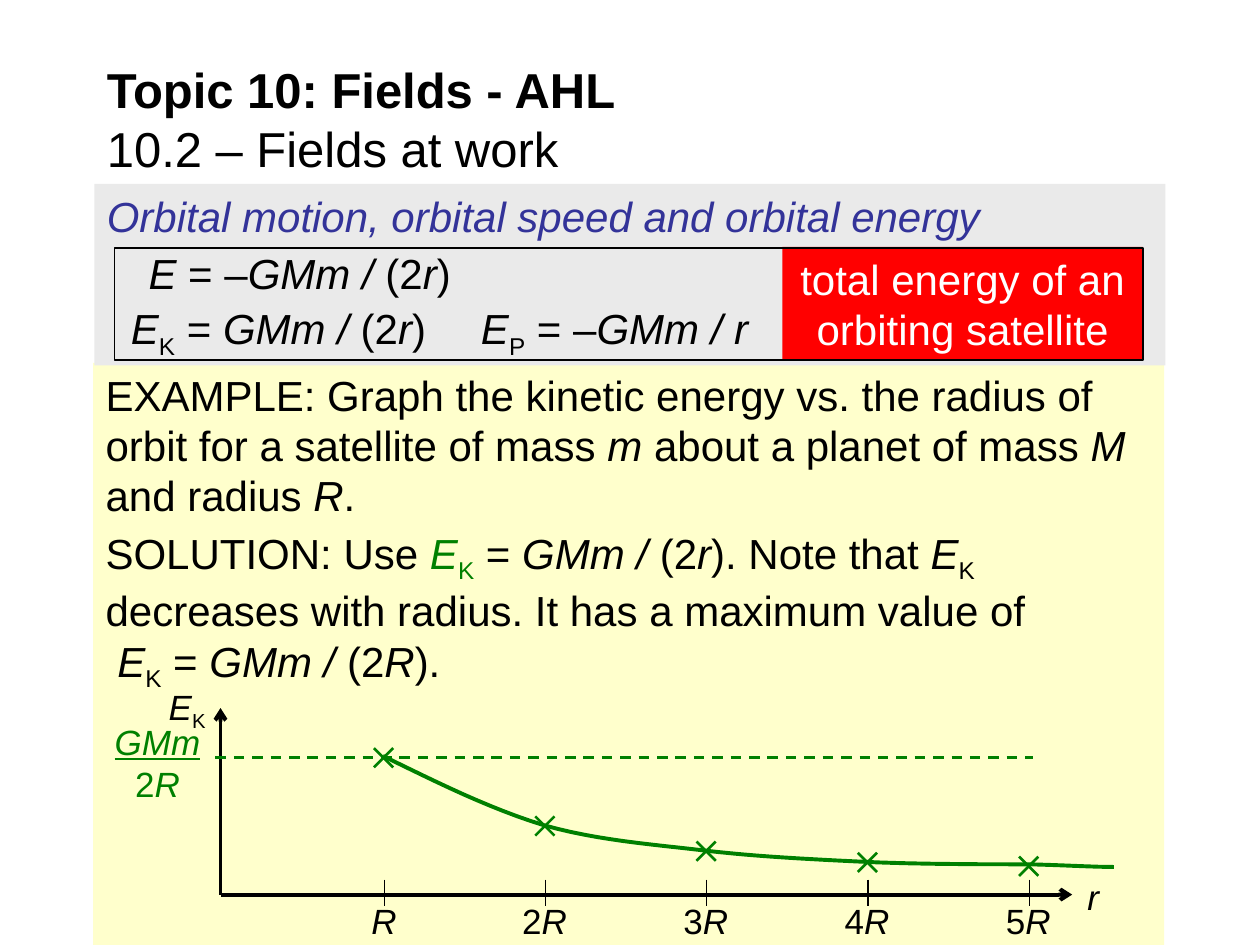
from lxml import etree
from pptx import Presentation
from pptx import util as u
from pptx.dml.color import RGBColor
from pptx.enum import dml, shapes, text
from pptx.oxml.ns import qn

COLORS = {
    "black": "000000", "white": "FFFFFF", "green": "008000", "blue": "333399",
    "yellow": "FFFFCC", "grey": "EAEAEA", "red": "FF0000",
}

# Text pieces are (text, styles): i italic, b bold, u underlined, s subscript
E_K = [("E", "i"), ("K", "s")]
E_P = [("E", "i"), ("P", "s")]


def over_2(radius):
    return [("GMm /", "i"), (" (2", ""), (radius, "i"), (")", "")]


def curve_points(start, segments, steps=12):
    """Points along a chain of cubic Bezier segments."""
    points = [start]
    for first, second, end in segments:
        for step in range(1, steps + 1):
            t = step / steps
            weights = ((1 - t) ** 3, 3 * t * (1 - t) ** 2, 3 * t * t * (1 - t), t ** 3)
            points.append(tuple(
                sum(w * v for w, v in zip(weights, values))
                for values in zip(start, first, second, end)))
        start = end
    return points


class SlideBuilder:
    font = "Arial"

    def __init__(self, slide):
        self.slide = slide

    def color(self, name):
        return RGBColor.from_string(COLORS[name])

    def fill_text(self, shape, paragraphs, size=24, color="black", align="LEFT",
                  anchor="TOP", wrap=True, spacing=None):
        frame = shape.text_frame
        frame.word_wrap = wrap
        frame.vertical_anchor = text.MSO_ANCHOR[anchor]
        for index, pieces in enumerate(paragraphs):
            paragraph = frame.add_paragraph() if index else frame.paragraphs[0]
            paragraph.alignment = text.PP_ALIGN[align]
            paragraph.line_spacing = spacing
            if index and size == 24:
                paragraph.space_before = u.Pt(4)
            for content, styles, *own_color in pieces:
                if content == "\n":
                    paragraph.add_line_break()
                    continue
                run = paragraph.add_run()
                run.text = content
                run.font.name = self.font
                run.font.size = u.Pt(size)
                run.font.bold = "b" in styles
                run.font.italic = "i" in styles
                run.font.underline = "u" in styles
                run.font.color.rgb = self.color(own_color[0] if own_color else color)
                if "s" in styles:
                    run.font._element.set("baseline", "-25000")

    def label(self, box, paragraphs, **style):
        shape = self.slide.shapes.add_textbox(*map(u.Pt, box))
        self.fill_text(shape, paragraphs, **style)

    def panel(self, box, fill=None, line=None, paragraphs=(), **style):
        shape = self.slide.shapes.add_shape(shapes.MSO_SHAPE.RECTANGLE, *map(u.Pt, box))
        shape.shadow.inherit = False
        if fill:
            shape.fill.solid()
            shape.fill.fore_color.rgb = self.color(fill)
        else:
            shape.fill.background()
        if line:
            shape.line.color.rgb = self.color(line)
            shape.line.width = u.Pt(1)
        else:
            shape.line.fill.background()
        self.fill_text(shape, paragraphs, **style)

    def line(self, start, end, color="black", width=0.75, dashed=False, arrow=False):
        connector = self.slide.shapes.add_connector(
            shapes.MSO_CONNECTOR.STRAIGHT, *map(u.Pt, (*start, *end)))
        connector.line.color.rgb = self.color(color)
        connector.line.width = u.Pt(width)
        if dashed:
            connector.line.dash_style = dml.MSO_LINE.DASH
        if arrow:
            etree.SubElement(connector.line._get_or_add_ln(), qn("a:tailEnd"), type="arrow")
        etree.SubElement(connector._element.spPr, qn("a:effectLst"))

    def cross(self, x, y, reach=5.5):
        for rise in (reach, -reach):
            self.line((x - reach, y - rise), (x + reach, y + rise), "green", 1.5)

    def curve(self, points, color, width):
        first, *rest = [(u.Pt(x), u.Pt(y)) for x, y in points]
        builder = self.slide.shapes.build_freeform(*first)
        builder.add_line_segments(rest, close=False)
        shape = builder.convert_to_shape()
        shape.shadow.inherit = False
        shape.fill.background()
        shape.line.color.rgb = self.color(color)
        shape.line.width = u.Pt(width)


def main():
    presentation = Presentation()
    presentation.slide_width, presentation.slide_height = u.Pt(720), u.Pt(540)
    slide = presentation.slides.add_slide(presentation.slide_layouts[6])
    builder = SlideBuilder(slide)

    # Example and solution
    example = [
        ("EXAMPLE: Graph the kinetic energy vs. the radius of orbit for a "
         "satellite of mass ", ""), ("m", "i"), (" about a planet of mass ", ""),
        ("M", "i"), (" and radius ", ""), ("R", "i"), (".", "")]
    solution = [
        ("SOLUTION: Use ", ""), *[(*piece, "green") for piece in E_K], (" = ", ""),
        *over_2("r"), (". Note that ", ""), *E_K,
        (" decreases with radius. It has a maximum value of", ""), ("\n", ""),
        (" ", ""), *E_K, (" = ", ""), *over_2("R"), (".", "")]
    builder.panel((53.3, 207.4, 612, 332.6), "yellow", paragraphs=[example, solution])

    # Axes
    origin = (126, 511.2)
    builder.line(origin, (126, 404.6), width=2.25, arrow=True)
    builder.line(origin, (612.7, 511.2), width=2.25, arrow=True)
    builder.label((89.3, 388, 36.7, 31), [E_K], size=20, wrap=False)
    builder.label((614.2, 496.8, 21, 31), [[("r", "i")]], size=20, wrap=False)

    # Ticks at whole multiples of R
    tick_xs = [219.6 + 92.16 * index for index in range(5)]
    for multiple, x in enumerate(tick_xs, start=1):
        builder.line((x, 502.6), (x, 517.7))
        number = [(str(multiple), "")] if multiple > 1 else []
        left = x - (20.5 if number else 14.4)
        builder.label((left, 510.5, 43 if number else 28.8, 31),
                      [number + [("R", "i")]], size=20, wrap=False)

    # Maximum kinetic energy
    builder.line((123.1, 432.7), (590.4, 432.7), "green", 1.5, dashed=True)
    builder.label((58.3, 408.2, 63.4, 55.4), [[("GMm", "iu")], [("2", ""), ("R", "i")]],
                  size=20, color="green", align="CENTER")

    # Plotted points and curve
    for x, y in zip(tick_xs, (433, 472, 486.4, 492.8, 495)):
        builder.cross(x - 0.4, y)
    builder.curve(curve_points((218.9, 432), [
        ((249.8, 447.1), (280.1, 462.2), (311, 471.6)),
        ((341.3, 480.2), (372.2, 482.4), (402.5, 486)),
        ((433.4, 489.6), (463.7, 491), (494.6, 492.5)),
        ((525.6, 493.9), (565.9, 493.9), (589, 493.9)),
        ((612.7, 494.6), (625, 495.4), (636.5, 495.4)),
    ]), "green", 2.25)

    # Title and section heading
    builder.label((54, 32.4, 612, 70.6), [[
        ("Topic 10: Fields - AHL", "b"), ("\n", ""), ("10.2 – Fields at work", "")]],
        size=28, anchor="MIDDLE")
    builder.panel((54, 105.1, 612, 103.7), "grey", paragraphs=[[
        ("Orbital motion, orbital speed and orbital energy", "i")]], color="blue")

    # Energy formulas
    builder.panel((447.1, 141.1, 205.9, 64.8), "red", paragraphs=[[
        ("total energy of an orbiting satellite", "")]], color="white", align="CENTER")
    builder.panel((65.5, 141.8, 587.5, 64.1), line="black")
    formulas = [
        ((77.8, 141.1, 327.6, 25.2), [("E", "i"), (" = –", ""), *over_2("r")]),
        ((67.7, 169.9, 205.2, 25.2), [*E_K, (" = ", ""), *over_2("r")]),
        ((267.8, 169.9, 196.6, 25.2), [*E_P, (" = –", ""), ("GMm / r", "i")]),
    ]
    for box, formula in formulas:
        builder.label(box, [formula], spacing=0.9)

    presentation.save("out.pptx")


if __name__ == "__main__":
    main()
